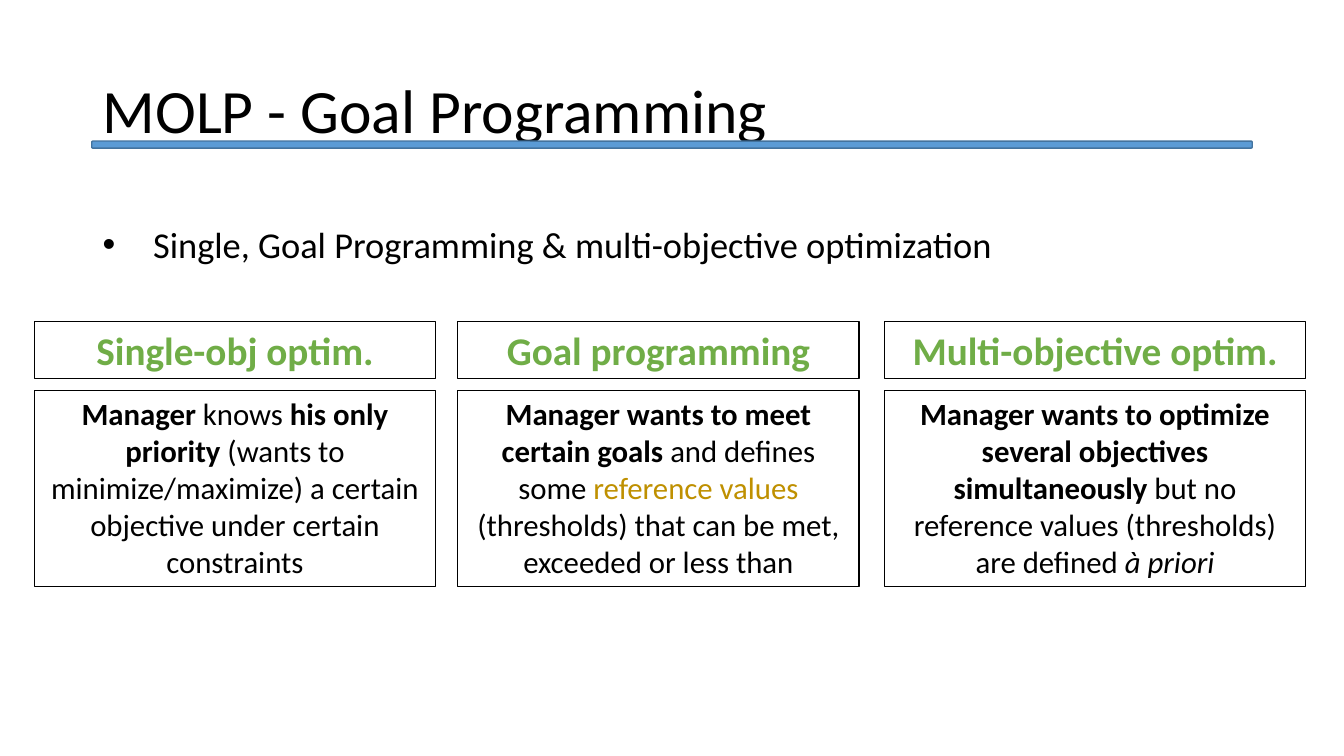
from lxml import etree
from pptx import Presentation
from pptx.dml.color import RGBColor
from pptx.enum import shapes, text
from pptx.oxml.ns import qn
from pptx.util import Inches, Pt

FONT = "Calibri"
BLACK = RGBColor(0x00, 0x00, 0x00)
GREEN = RGBColor(0x70, 0xAD, 0x47)
GOLD = RGBColor(0xBF, 0x90, 0x00)
BLUE = RGBColor(0x5B, 0x9B, 0xD5)
NAVY = RGBColor(0x43, 0x73, 0x9E)

# Each column: left, width, heading, body runs as (words, style)
COLUMNS = [
    (0.34, 3.98, "Single-obj optim.", [
        ("Manager ", {"bold": True}),
        ("knows", {}),
        (" his only priority ", {"bold": True}),
        ("(wants to minimize/maximize) a certain objective "
         "under certain constraints", {})]),
    (4.54, 3.98, "Goal programming", [
        ("Manager wants to meet certain goals ", {"bold": True}),
        ("and defines some ", {}),
        ("reference values ", {"color": GOLD}),
        ("(thresholds) that can be met, exceeded or less than", {})]),
    (8.77, 4.18, "Multi-objective optim.", [
        ("Manager wants to optimize several objectives simultaneously ",
         {"bold": True}),
        ("but no reference values (thresholds) are defined ", {}),
        ("à priori", {"italic": True})]),
]


def add_run(para, words, size, color=BLACK, bold=False, italic=False):
    run = para.add_run()
    run.text = words
    font = run.font
    font.name, font.size = FONT, Pt(size)
    font.bold, font.italic = bold, italic
    font.color.rgb = color


def add_rect(slide, kind, box, line, width):
    rect = slide.shapes.add_shape(kind, *map(Inches, box))
    rect.shadow.inherit = False
    rect.fill.background()
    rect.line.color.rgb = line
    rect.line.width = Pt(width)
    return rect


def add_card(slide, box, runs, size):
    """Add an outlined box with centred text."""
    card = add_rect(slide, shapes.MSO_SHAPE.RECTANGLE, box, BLACK, 0.75)
    frame = card.text_frame
    frame.word_wrap = True
    frame.vertical_anchor = text.MSO_ANCHOR.TOP
    para = frame.paragraphs[0]
    para.alignment = text.PP_ALIGN.CENTER
    for words, style in runs:
        add_run(para, words, size, **style)


def add_text(slide, box, words, size, anchor=text.MSO_ANCHOR.TOP):
    frame = slide.shapes.add_textbox(*map(Inches, box)).text_frame
    frame.word_wrap = True
    frame.vertical_anchor = anchor
    para = frame.paragraphs[0]
    add_run(para, words, size)
    return para


def set_bullet(para, indent):
    props = para._p.get_or_add_pPr()
    props.set("marL", str(Inches(indent)))
    props.set("indent", str(-Inches(indent)))
    etree.SubElement(props, qn("a:buFont")).set("typeface", "Arial")
    etree.SubElement(props, qn("a:buChar")).set("char", "•")


def add_bar(slide, box):
    bar = add_rect(slide, shapes.MSO_SHAPE.ROUNDED_RECTANGLE, box, NAVY, 1)
    bar.fill.solid()
    bar.fill.fore_color.rgb = BLUE


def main():
    deck = Presentation()
    deck.slide_width, deck.slide_height = Inches(13.33), Inches(7.5)
    slide = deck.slides.add_slide(deck.slide_layouts[6])

    for left, width, head, body in COLUMNS:
        add_card(slide, (left, 3.19, width, 0.57),
                 [(head, {"color": GREEN, "bold": True})], 28)
        add_card(slide, (left, 3.87, width, 1.95), body, 22)

    point = add_text(slide, (0.92, 2.15, 9.69, 0.54),
                     "Single, Goal Programming & multi-objective optimization",
                     26)
    set_bullet(point, 0.5)
    title = add_text(slide, (0.92, 0.4, 11.5, 1.45),
                     "MOLP - Goal Programming", 44, text.MSO_ANCHOR.MIDDLE)
    title.line_spacing = 0.9
    add_bar(slide, (0.91, 1.4, 11.51, 0.07))

    deck.save("out.pptx")


if __name__ == "__main__":
    main()
